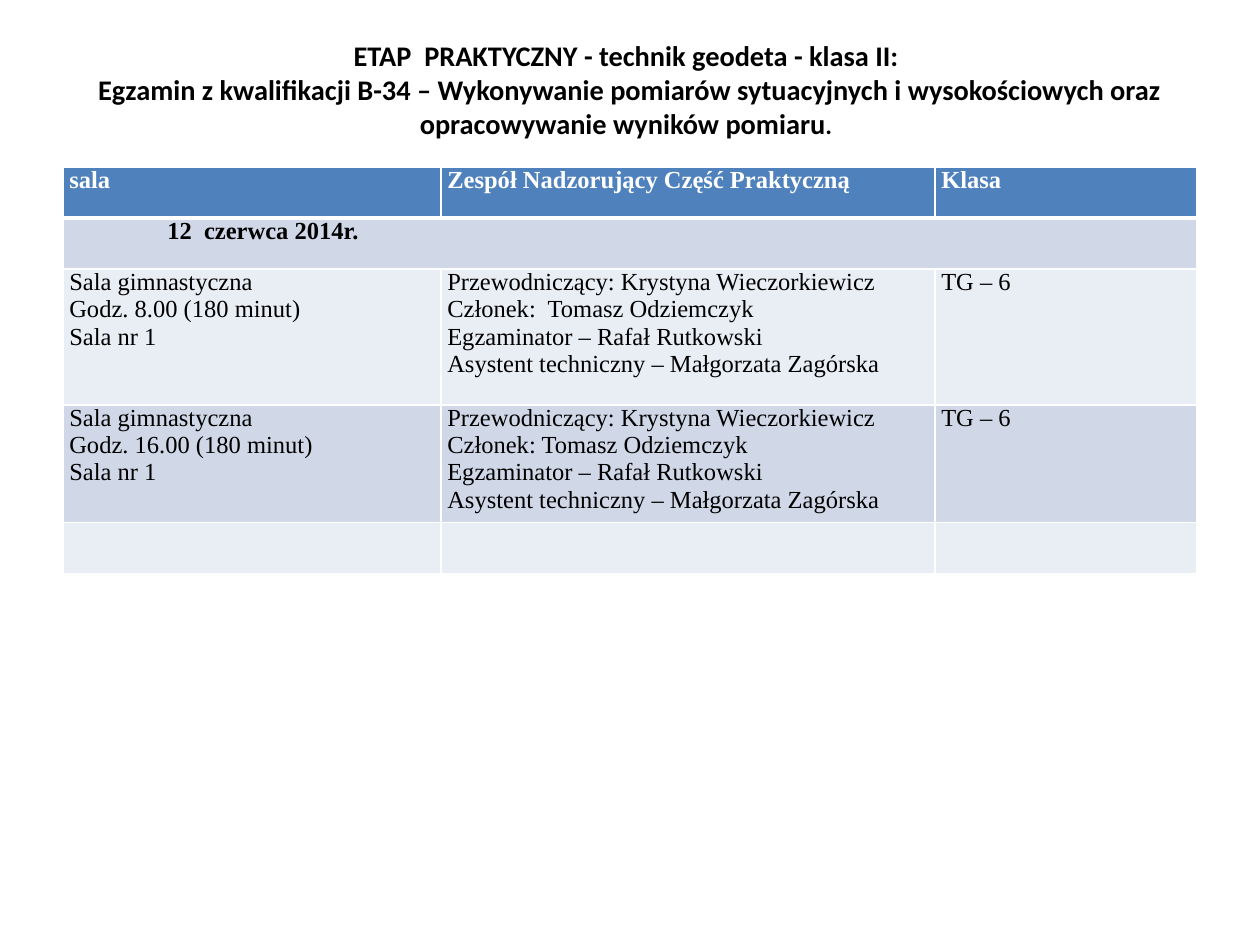
from lxml import etree
from pptx import Presentation
from pptx import util as u
from pptx.dml.color import RGBColor
from pptx.enum import text
from pptx.oxml.ns import qn

SCALE = 914400 / 126
COLORS = {
    "header": "4F81BD",
    "dark_band": "D0D8E8",
    "light_band": "E9EDF4",
    "white": "FFFFFF",
    "black": "000000",
}
COLUMNS = [378, 494, 262]
ROWS = [51, 51, 136, 108, 51]
BANDS = ["header", "dark_band", "light_band", "dark_band", "light_band"]
HEADINGS = ["sala", "Zespół Nadzorujący Część Praktyczną", "Klasa"]
EXAM_DAY = "12  czerwca 2014r."
SESSIONS = [("8.00", "Członek:  Tomasz Odziemczyk"),
            ("16.00", "Członek: Tomasz Odziemczyk")]


def px(length):
    return u.Emu(round(length * SCALE))


def set_font(font, name, size, color, bold):
    font.name = name
    font.size = u.Pt(size)
    font.bold = bold
    font.color.rgb = RGBColor.from_string(COLORS[color])


def session_row(hour, member):
    return [
        f"Sala gimnastyczna\nGodz. {hour} (180 minut)\nSala nr 1",
        "Przewodniczący: Krystyna Wieczorkiewicz\n"
        f"{member}\n"
        "Egzaminator – Rafał Rutkowski\n"
        "Asystent techniczny – Małgorzata Zagórska",
        "TG – 6",
    ]


def add_title(slide, left, top, width, height):
    frame = slide.shapes.add_textbox(px(left), px(top), px(width), px(height)).text_frame
    frame.word_wrap = True
    frame.vertical_anchor = text.MSO_ANCHOR.MIDDLE
    frame.margin_top = frame.margin_bottom = 0
    heading = frame.paragraphs[0]
    heading.alignment = text.PP_ALIGN.CENTER
    heading.text = (
        "ETAP  PRAKTYCZNY - technik geodeta - klasa II:\v"
        " Egzamin z kwalifikacji B-34 – Wykonywanie pomiarów sytuacyjnych"
        " i wysokościowych oraz opracowywanie wyników pomiaru"
    )
    set_font(heading.font, "Calibri", 16.2, "black", True)
    full_stop = heading.add_run()
    full_stop.text = "."
    full_stop.font.size = u.Pt(14.4)


def set_borders(cell, bottom):
    properties = cell._tc.get_or_add_tcPr()
    sides = [("a:lnL", 1), ("a:lnR", 1), ("a:lnT", 1), ("a:lnB", bottom)]
    for position, (side, points) in enumerate(sides):
        line = etree.Element(qn(side), w=str(u.Pt(points)))
        fill = etree.SubElement(line, qn("a:solidFill"))
        etree.SubElement(fill, qn("a:srgbClr"), val=COLORS["white"])
        properties.insert(position, line)


def fill_cell(cell, content, band, bold):
    header = band == "header"
    cell.margin_left = cell.margin_right = u.Inches(0.05)
    cell.margin_top = cell.margin_bottom = 0
    cell.fill.solid()
    cell.fill.fore_color.rgb = RGBColor.from_string(COLORS[band])
    set_borders(cell, 3 if header else 1)
    cell.text_frame.text = content
    for paragraph in cell.text_frame.paragraphs:
        set_font(paragraph.font, "Times New Roman", 14,
                 "white" if header else "black", bold)


def add_schedule(slide, left, top, width, height):
    schedule = slide.shapes.add_table(
        len(ROWS), len(COLUMNS), px(left), px(top), px(width), px(height)).table
    for column, column_width in zip(schedule.columns, COLUMNS):
        column.width = px(column_width)
    for row, row_height in zip(schedule.rows, ROWS):
        row.height = px(row_height)
    contents = [HEADINGS, [EXAM_DAY, "", ""],
                *(session_row(*session) for session in SESSIONS), ["", "", ""]]
    for r, (row, band) in enumerate(zip(contents, BANDS)):
        for c, content in enumerate(row):
            fill_cell(schedule.cell(r, c), content, band, r < 2)
    exam_day = schedule.cell(1, 0)
    exam_day.merge(schedule.cell(1, 2))
    exam_day.text_frame.paragraphs[0]._p.get_or_add_pPr().set("marL", str(px(98)))


def main():
    prs = Presentation()
    prs.slide_width, prs.slide_height = px(1260), px(945)
    slide = prs.slides.add_slide(prs.slide_layouts[6])
    add_title(slide, 59, 29, 1134, 120)
    add_schedule(slide, 63, 167, sum(COLUMNS), sum(ROWS))
    prs.save("out.pptx")


if __name__ == "__main__":
    main()
